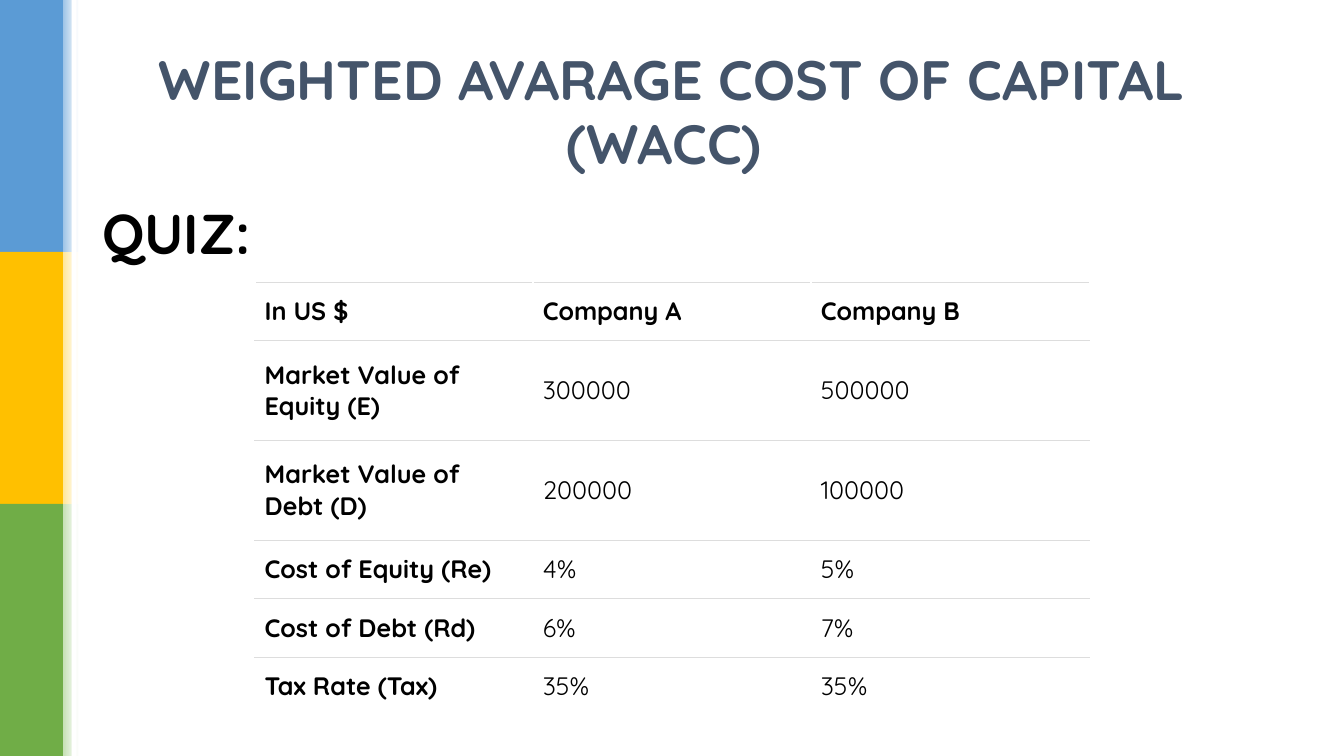
import pptx
import pptx.util
import pptx.dml.color
import pptx.enum.shapes
import pptx.enum.text
import pptx.oxml

Pt = pptx.util.Pt
RGBColor = pptx.dml.color.RGBColor
ANCHOR = pptx.enum.text.MSO_ANCHOR
ALIGN = pptx.enum.text.PP_ALIGN

FONT = "Quicksand"
WHITE = RGBColor(0xFF, 0xFF, 0xFF)
BLACK = RGBColor(0, 0, 0)
SLATE = RGBColor(0x44, 0x54, 0x6A)
RULE = RGBColor(0xDD, 0xDD, 0xDD)
BANDS = [
    (RGBColor(0x5B, 0x9B, 0xD5), RGBColor(0x9D, 0xC3, 0xE6)),
    (RGBColor(0xFF, 0xC0, 0x00), RGBColor(0xFF, 0xE6, 0x99)),
    (RGBColor(0x70, 0xAD, 0x47), RGBColor(0xC5, 0xE0, 0xB4)),
]
BAND_WIDTH, BAND_HEIGHT, FADE_WIDTH = 45, 180, 11.5
COLUMN_WIDTH, ROW_HEIGHT, TALL_ROW_HEIGHT = 198.65, 41.8, 71.2

ROWS = [
    ("In US $", "Company A", "Company B"),
    ("Market Value of Equity (E)", "300000", "500000"),
    ("Market Value of Debt (D)", "200000", "100000"),
    ("Cost of Equity (Re)", "4%", "5%"),
    ("Cost of Debt (Rd)", "6%", "7%"),
    ("Tax Rate (Tax)", "35%", "35%"),
]
TALL_ROWS = (1, 2)


def add_run(p, text, size, color, bold=True):
    r = p.add_run()
    r.text = text
    r.font.name = FONT
    r.font.size = Pt(size)
    r.font.bold = bold
    r.font.color.rgb = color


def add_rect(s, left, top, width, height, color, fade_to=None):
    sp = s.shapes.add_shape(pptx.enum.shapes.MSO_SHAPE.RECTANGLE,
                            Pt(left), Pt(top), Pt(width), Pt(height))
    sp.shadow.inherit = False
    sp.line.fill.background()
    if fade_to is None:
        sp.fill.solid()
        sp.fill.fore_color.rgb = color
    else:
        sp.fill.gradient()
        sp.fill.gradient_angle = 0
        for stop, stop_color in zip(sp.fill.gradient_stops, (color, fade_to)):
            stop.color.rgb = stop_color


def add_side_bands(s):
    for i, (color, tint) in enumerate(BANDS):
        top = i * BAND_HEIGHT
        add_rect(s, 0, top, BAND_WIDTH, BAND_HEIGHT, color)
        add_rect(s, BAND_WIDTH, top, FADE_WIDTH, BAND_HEIGHT, tint, WHITE)
    add_rect(s, 51.2, 0, 3.6, 540, WHITE)


def set_title(s, text):
    sp = s.shapes.title
    sp.left, sp.top, sp.width, sp.height = Pt(66), Pt(28.75), Pt(828), Pt(104.4)
    tf = sp.text_frame
    tf.word_wrap = True
    tf.auto_size = pptx.enum.text.MSO_AUTO_SIZE.NONE
    tf.vertical_anchor = ANCHOR.MIDDLE
    p = tf.paragraphs[0]
    p.alignment = ALIGN.CENTER
    p.line_spacing = 0.96
    add_run(p, text, 39.6, SLATE)


def add_heading(s, text):
    sp = s.shapes.add_textbox(Pt(66), Pt(144), Pt(828), Pt(54))
    tf = sp.text_frame
    tf.word_wrap = True
    p = tf.paragraphs[0]
    p.line_spacing = 0.9
    add_run(p, text, 40, BLACK)


def add_top_rule(cell):
    ln = pptx.oxml.parse_xml(
        '<a:lnT xmlns:a="http://schemas.openxmlformats.org/drawingml/2006/main" '
        f'w="{Pt(0.75)}"><a:solidFill><a:srgbClr val="{RULE}"/></a:solidFill></a:lnT>')
    cell._tc.get_or_add_tcPr().insert(0, ln)


def add_bottom_rule(cell):
    add_top_rule(cell)
    tcPr = cell._tc.tcPr
    ln = tcPr[0]
    ln.tag = ln.tag.replace("lnT", "lnB")


def fill_cell(cell, text, bold):
    cell.fill.solid()
    cell.fill.fore_color.rgb = WHITE
    cell.vertical_anchor = ANCHOR.MIDDLE
    cell.margin_left = cell.margin_right = Pt(7)
    cell.margin_top = cell.margin_bottom = Pt(4.5)
    add_run(cell.text_frame.paragraphs[0], text, 18, BLACK, bold)


def add_quiz_table(s):
    heights = [TALL_ROW_HEIGHT if i in TALL_ROWS else ROW_HEIGHT
               for i in range(len(ROWS))]
    columns = len(ROWS[0])
    table = s.shapes.add_table(len(ROWS), columns, Pt(182.1), Pt(201.6),
                               Pt(COLUMN_WIDTH * columns), Pt(sum(heights))).table
    table.first_row = False
    table.horz_banding = False
    for column in table.columns:
        column.width = Pt(COLUMN_WIDTH)
    for i, values in enumerate(ROWS):
        table.rows[i].height = Pt(heights[i])
        for j, text in enumerate(values):
            cell = table.cell(i, j)
            fill_cell(cell, text, i == 0 or j == 0)
            if i < len(ROWS) - 1:
                add_bottom_rule(cell)
            add_top_rule(cell)


def main():
    prs = pptx.Presentation()
    prs.slide_width, prs.slide_height = Pt(960), Pt(540)
    s = prs.slides.add_slide(prs.slide_layouts.get_by_name("Title Only"))
    add_side_bands(s)
    set_title(s, "WEIGHTED AVARAGE COST OF CAPITAL (WACC) ")
    add_heading(s, "QUIZ:")
    add_quiz_table(s)
    prs.save("out.pptx")


if __name__ == "__main__":
    main()
